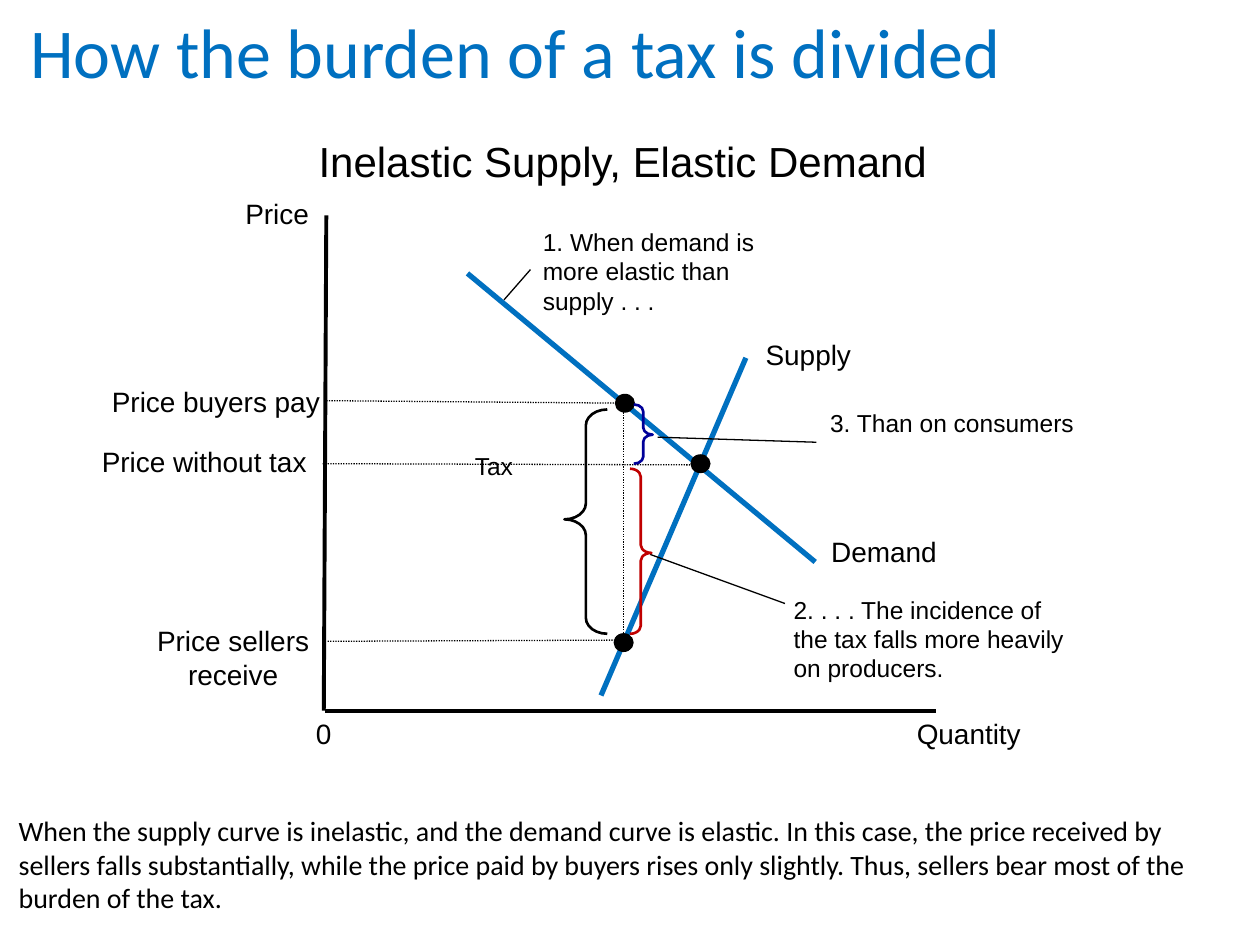
"""Build a supply and demand slide on how the burden of a tax is divided."""
from dataclasses import dataclass
from typing import Optional

from pptx import Presentation
from pptx.dml.color import RGBColor
from pptx.enum.dml import MSO_LINE_DASH_STYLE as Dash
from pptx.enum.shapes import MSO_CONNECTOR as Connector, MSO_SHAPE as Shape
from pptx.enum.text import MSO_ANCHOR as Anchor, MSO_AUTO_SIZE as AutoSize, PP_ALIGN as Align
from pptx.oxml.ns import qn
from pptx.slide import Slide
from pptx.util import Inches, Pt

BLACK = RGBColor(0x00, 0x00, 0x00)
WHITE = RGBColor(0xFF, 0xFF, 0xFF)
BLUE = RGBColor(0x00, 0x70, 0xC0)
NAVY = RGBColor(0x00, 0x00, 0x99)
RED = RGBColor(0xC0, 0x00, 0x00)
DOT_WIDTH, DOT_HEIGHT = 0.16, 0.15


@dataclass
class Line:
    start: tuple[float, float]
    end: tuple[float, float]
    width: float = 0.75
    color: RGBColor = BLACK
    dash: Optional[Dash] = None


@dataclass
class Label:
    text: str
    box: tuple[float, float, float, float]
    size: int = 16
    align: Align = Align.LEFT
    wrap: bool = False
    font: str = "Arial"


@dataclass
class Brace:
    box: tuple[float, float, float, float]
    color: RGBColor = BLACK
    rotation: int = 0


AXES = [
    Line((2.59, 1.71), (2.57, 5.64), 2.25),
    Line((2.58, 5.64), (7.43, 5.64), 2.25),
]
CURVES = [
    Line((3.71, 2.17), (6.47, 4.46), 3, BLUE),
    Line((4.77, 5.52), (5.92, 2.84), 3, BLUE),
]
GUIDES = [
    Line((4.95, 3.17), (4.95, 5.1), dash=Dash.ROUND_DOT),
    Line((2.59, 3.18), (4.97, 3.2), dash=Dash.ROUND_DOT),
    Line((2.56, 3.68), (5.57, 3.69), dash=Dash.ROUND_DOT),
    Line((2.6, 5.09), (4.95, 5.08), dash=Dash.ROUND_DOT),
]
CALLOUT_LINES = [
    Line((4.21, 2.14), (4, 2.38)),
    Line((5.22, 3.47), (6.48, 3.51)),
    Line((5.16, 4.4), (6.23, 4.79)),
]
DOT_CENTERS = [(5.56, 3.68), (4.96, 3.2), (4.95, 5.1)]
BRACES = [
    Brace((4.48, 3.25, 0.34, 1.78)),
    Brace((5.03, 3.21, 0.15, 0.47), NAVY, 180),
    Brace((5, 3.72, 0.17, 1.31), RED, 180),
]
LABELS = [
    Label("Inelastic Supply, Elastic Demand", (2.43, 1.03, 5.08, 0.5), 24),
    Label("Price", (1.74, 1.51, 0.81, 0.37), align=Align.RIGHT, wrap=True),
    Label("Quantity", (6.84, 5.64, 1.36, 0.37), align=Align.RIGHT, wrap=True),
    Label("0", (2.41, 5.64, 0.33, 0.37)),
    Label("Demand", (6.49, 4.19, 1.05, 0.37), align=Align.CENTER),
    Label("Supply", (5.97, 2.63, 0.89, 0.37), align=Align.CENTER),
    Label("Price buyers pay", (0.79, 3, 1.87, 0.37)),
    Label("Price without tax", (0.71, 3.48, 1.85, 0.37)),
    Label("Price sellers\nreceive", (1.14, 4.9, 1.42, 0.64), align=Align.CENTER),
    Label("Tax", (3.51, 3.53, 0.82, 0.34), 14, Align.CENTER, True),
    Label("1. When demand is more elastic than supply . . .",
          (4.21, 1.75, 2.27, 0.81), 14, wrap=True),
    Label("2. . . . The incidence of the tax falls more heavily on producers.",
          (6.2, 4.67, 2.43, 0.81), 14, wrap=True),
    Label("3. Than on consumers", (6.49, 3.19, 2.43, 0.34), 14, wrap=True),
    Label("When the supply curve is inelastic, and the demand curve is elastic. "
          "In this case, the price received by sellers falls substantially, while "
          "the price paid by buyers rises only slightly. Thus, sellers bear most "
          "of the burden of the tax.",
          (0.05, 6.41, 9.78, 0.91), wrap=True, font="Calibri"),
]


def add_title(slide: Slide, text: str) -> None:
    title = slide.shapes.title
    title.left, title.top, title.width, title.height = map(Inches, (0.14, 0.02, 9.86, 0.58))
    frame = title.text_frame
    frame.text = text
    frame.word_wrap = True
    frame.auto_size = AutoSize.NONE
    frame.vertical_anchor = Anchor.TOP
    paragraph = frame.paragraphs[0]
    paragraph.alignment = Align.LEFT
    paragraph.font.name = "Calibri"
    paragraph.font.size = Pt(40)
    paragraph.font.color.rgb = BLUE


def add_line(slide: Slide, line: Line) -> None:
    points = map(Inches, (*line.start, *line.end))
    connector = slide.shapes.add_connector(Connector.STRAIGHT, *points)
    connector.line.width = Pt(line.width)
    connector.line.color.rgb = line.color
    if line.dash is not None:
        connector.line.dash_style = line.dash
    properties = connector._element.spPr
    properties.append(properties.makeelement(qn("a:effectLst"), {}))


def add_plot_area(slide: Slide) -> None:
    area = slide.shapes.add_shape(Shape.RECTANGLE, *map(Inches, (2.59, 1.79, 4.84, 3.83)))
    area.shadow.inherit = False
    area.fill.solid()
    area.fill.fore_color.rgb = WHITE
    area.line.color.rgb = WHITE
    area.line.width = Pt(2)


def add_dot(slide: Slide, center: tuple[float, float]) -> None:
    x, y = center
    box = (x - DOT_WIDTH / 2, y - DOT_HEIGHT / 2, DOT_WIDTH, DOT_HEIGHT)
    dot = slide.shapes.add_shape(Shape.OVAL, *map(Inches, box))
    dot.shadow.inherit = False
    dot.fill.solid()
    dot.fill.fore_color.rgb = BLACK
    dot.line.fill.background()


def add_brace(slide: Slide, brace: Brace) -> None:
    shape = slide.shapes.add_shape(Shape.LEFT_BRACE, *map(Inches, brace.box))
    shape.shadow.inherit = False
    shape.adjustments[0], shape.adjustments[1] = 0.37, 0.49
    shape.rotation = brace.rotation
    shape.fill.background()
    shape.line.color.rgb = brace.color
    shape.line.width = Pt(1.5)


def add_label(slide: Slide, label: Label) -> None:
    frame = slide.shapes.add_textbox(*map(Inches, label.box)).text_frame
    frame.text = label.text
    frame.word_wrap = label.wrap
    frame.auto_size = AutoSize.SHAPE_TO_FIT_TEXT
    for paragraph in frame.paragraphs:
        paragraph.alignment = label.align
        paragraph.font.name = label.font
        paragraph.font.size = Pt(label.size)
        paragraph.font.color.rgb = BLACK


def main() -> None:
    presentation = Presentation()
    presentation.slide_width, presentation.slide_height = Inches(10), Inches(7.5)
    slide = presentation.slides.add_slide(presentation.slide_layouts[5])
    add_title(slide, "How the burden of a tax is divided")
    add_plot_area(slide)
    for line in AXES + CURVES + GUIDES + CALLOUT_LINES:
        add_line(slide, line)
    for center in DOT_CENTERS:
        add_dot(slide, center)
    for brace in BRACES:
        add_brace(slide, brace)
    for label in LABELS:
        add_label(slide, label)
    presentation.save("out.pptx")


if __name__ == "__main__":
    main()
